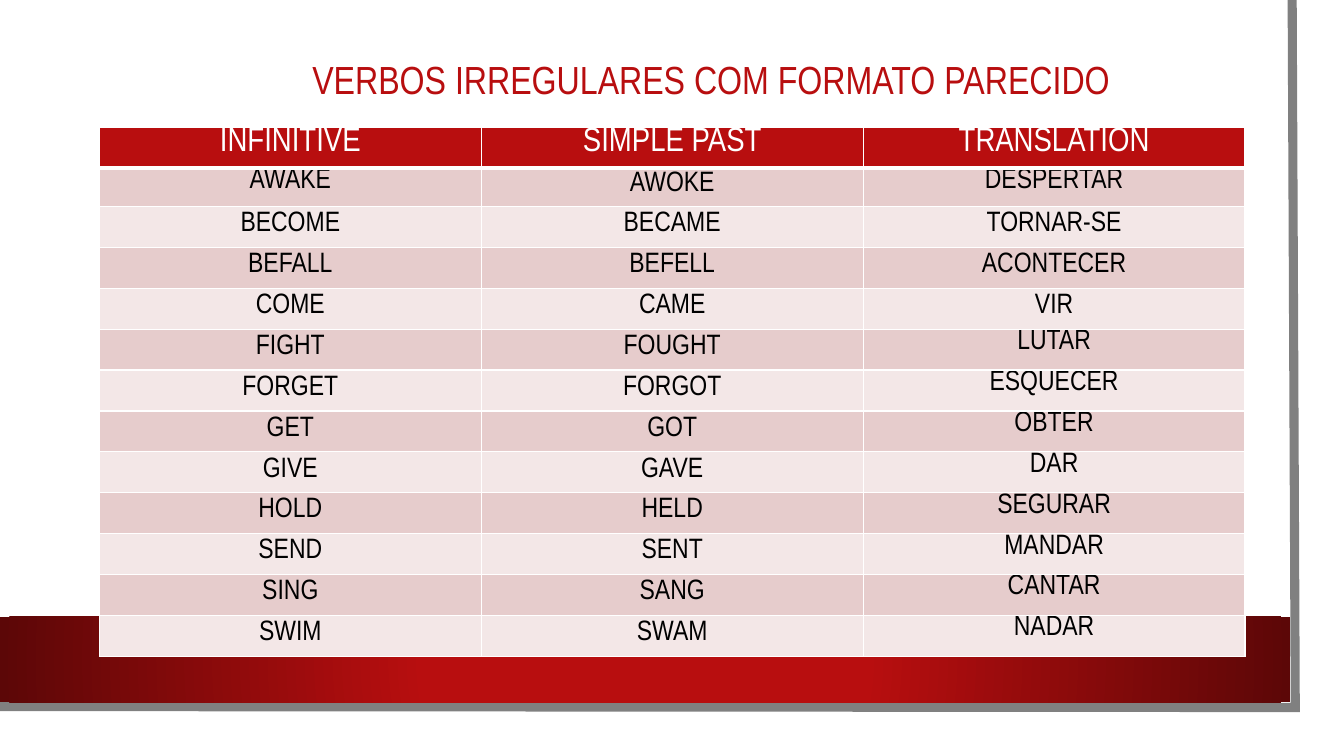
from lxml.etree import SubElement
from pptx import Presentation
from pptx.dml.color import RGBColor
from pptx.enum.shapes import MSO_SHAPE
from pptx.enum.text import MSO_ANCHOR, PP_ALIGN
from pptx.oxml import parse_xml
from pptx.oxml.ns import nsdecls, qn
from pptx.util import Pt

FONT = "Arial Narrow"
COLORS = {
    "white": "FFFFFF",
    "black": "000000",
    "gray": "808080",
    "red": "B80E0F",
    "dark_red": "5C0707",
    "rose": "E6CCCC",
    "pale_rose": "F3E7E7",
}
HEADINGS = ("INFINITIVE", "SIMPLE PAST", "TRANSLATION")
VERBS = (
    ("AWAKE", "AWOKE", "DESPERTAR"),
    ("BECOME", "BECAME", "TORNAR-SE"),
    ("BEFALL", "BEFELL", "ACONTECER"),
    ("COME", "CAME", "VIR"),
    ("FIGHT", "FOUGHT", "LUTAR"),
    ("FORGET", "FORGOT", "ESQUECER"),
    ("GET", "GOT", "OBTER"),
    ("GIVE", "GAVE", "DAR"),
    ("HOLD", "HELD", "SEGURAR"),
    ("SEND", "SENT", "MANDAR"),
    ("SING", "SANG", "CANTAR"),
    ("SWIM", "SWAM", "NADAR"),
)
TOP_ANCHORED = {(1, 0), (1, 2)} | {(row, 2) for row in range(5, 13)}


def color(name):
    """Return the named colour."""
    return RGBColor.from_string(COLORS[name])


def add_span(para, text, size, color_name):
    """Add one run of styled text."""
    span = para.add_run()
    span.text = text
    span.font.name = FONT
    span.font.size = Pt(size)
    span.font.color.rgb = color(color_name)


def add_rectangle(page, left, top, width, height):
    """Add a rectangle without line or shadow."""
    box = page.shapes.add_shape(
        MSO_SHAPE.RECTANGLE, Pt(left), Pt(top), Pt(width), Pt(height)
    )
    box.shadow.inherit = False
    box.line.fill.background()
    return box


def add_sheet(page):
    """Add the white sheet."""
    sheet = add_rectangle(page, 0, 0, 943, 523.5)
    sheet.fill.solid()
    sheet.fill.fore_color.rgb = color("white")


def add_edge(page):
    """Add the gray edge along the right and bottom of the sheet."""
    builder = page.shapes.build_freeform(Pt(923), Pt(0), scale=1.0)
    builder.add_line_segments(
        [(Pt(925.2), Pt(505.4)), (Pt(-2.2), Pt(504.7))], close=False
    )
    edge = builder.convert_to_shape()
    edge.shadow.inherit = False
    edge.fill.background()
    edge.line.color.rgb = color("gray")
    edge.line.width = Pt(6.5)
    SubElement(edge.line._get_or_add_ln(), qn("a:miter"), lim="800000")


def add_band(page):
    """Add the red band with a radial gradient."""
    band = add_rectangle(page, 0, 440.6, 921.6, 61.2)
    band.fill.gradient()
    stops = zip(band.fill.gradient_stops, (0.34, 1), ("red", "dark_red"))
    for stop, position, color_name in stops:
        stop.position = position
        stop.color.rgb = color(color_name)
    gradient = band._element.spPr.find(qn("a:gradFill"))
    gradient.replace(
        gradient.find(qn("a:lin")),
        parse_xml(
            f'<a:path {nsdecls("a")} path="circle">'
            '<a:fillToRect l="50000" t="50000" r="50000" b="50000"/></a:path>'
        ),
    )


def add_title(page, text):
    """Add the slide title."""
    box = page.shapes.add_textbox(Pt(216), Pt(38.9), Pt(774.7), Pt(39.6))
    frame = box.text_frame
    frame.word_wrap = True
    frame.vertical_anchor = MSO_ANCHOR.MIDDLE
    para = frame.paragraphs[0]
    para.line_spacing = 0.9
    add_span(para, text, 28, "red")


def set_borders(cell, widths):
    """Draw white borders of the given widths by side."""
    properties = cell._tc.get_or_add_tcPr()
    for index, (side, width) in enumerate(widths.items()):
        border = parse_xml(
            f'<a:ln{side} {nsdecls("a")} w="{Pt(width)}"><a:solidFill>'
            f'<a:srgbClr val="{COLORS["white"]}"/></a:solidFill></a:ln{side}>'
        )
        properties.insert(index, border)


def fill_cell(cell, text, row, column):
    """Write and style one table cell."""
    header = row == 0
    band = "rose" if row % 2 else "pale_rose"
    cell.fill.solid()
    cell.fill.fore_color.rgb = color("red" if header else band)
    cell.margin_top = 0
    cell.margin_bottom = Pt(0 if header else 3.6)
    on_top = header or (row, column) in TOP_ANCHORED
    cell.vertical_anchor = MSO_ANCHOR.TOP if on_top else MSO_ANCHOR.MIDDLE
    para = cell.text_frame.paragraphs[0]
    para.alignment = PP_ALIGN.CENTER
    add_span(para, text, 24 if header else 20, "white" if header else "black")
    top = 3 if row == 1 else 1
    set_borders(cell, {"L": 1, "R": 1, "T": top, "B": 3 if header else 1})


def add_verb_table(page):
    """Add the table of irregular verbs."""
    rows = (HEADINGS, *VERBS)
    table = page.shapes.add_table(
        len(rows), len(HEADINGS), Pt(71), Pt(90.7), Pt(818.4), Pt(377)
    ).table
    for column in table.columns:
        column.width = Pt(272.8)
    for row, texts in enumerate(rows):
        table.rows[row].height = Pt(26.4 if row == 1 else 29.2)
        for column, text in enumerate(texts):
            fill_cell(table.cell(row, column), text, row, column)


def main():
    """Build and save the deck."""
    deck = Presentation()
    deck.slide_width, deck.slide_height = Pt(960), Pt(540)
    page = deck.slides.add_slide(deck.slide_layouts[6])
    add_sheet(page)
    add_edge(page)
    add_band(page)
    add_title(page, "VERBOS IRREGULARES COM FORMATO PARECIDO")
    add_verb_table(page)
    deck.save("out.pptx")


if __name__ == "__main__":
    main()
